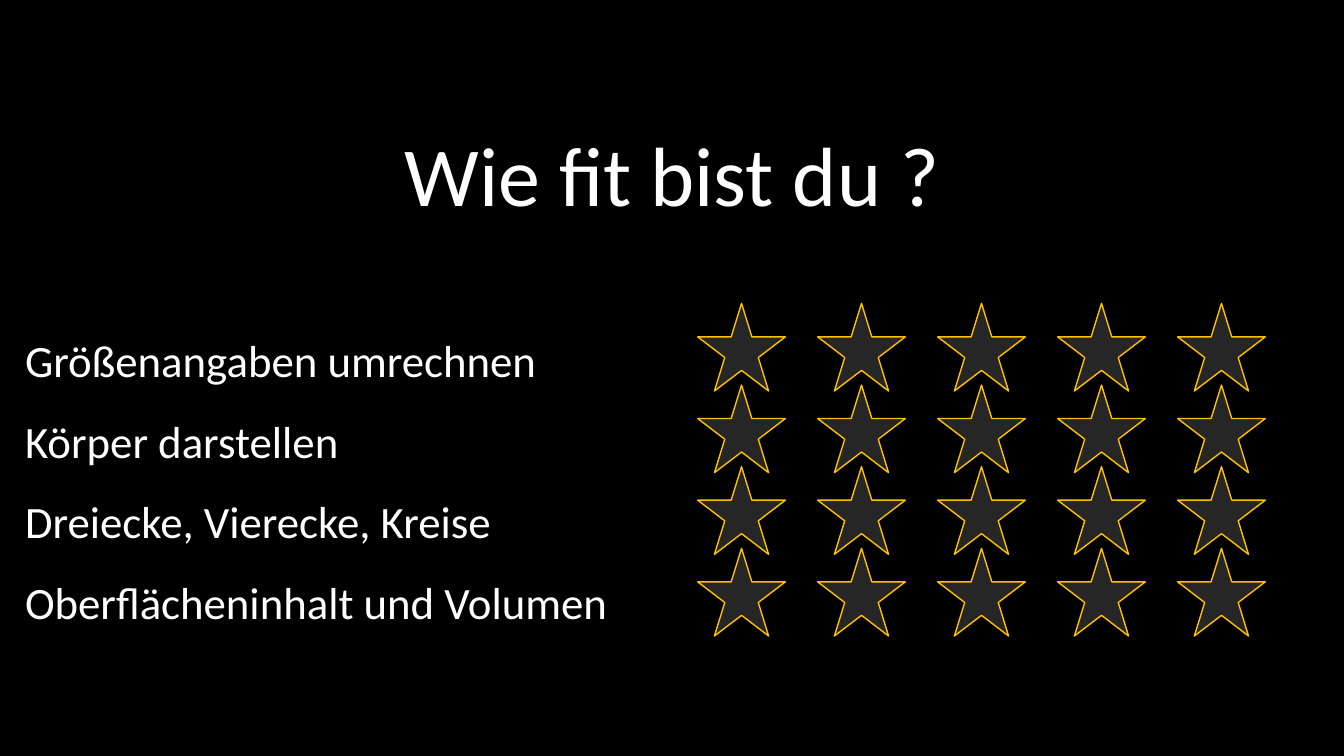
import pptx
import pptx.dml.color
import pptx.enum.shapes
import pptx.enum.text
import pptx.util

Inches = pptx.util.Inches
Pt = pptx.util.Pt
ALIGN = pptx.enum.text.PP_ALIGN

TITLE = "Wie fit bist du ?"
TOPICS = [
    "Größenangaben umrechnen",
    "Körper darstellen",
    "Dreiecke, Vierecke, Kreise",
    "Oberflächeninhalt und Volumen",
]
STARS_PER_TOPIC = 5
STAR_SIZE = 0.87
STARS_LEFT, STARS_TOP = 6.92, 3.01
STAR_STEP, RATING_STEP = 1.19, 0.81

TITLE_FORMAT = {"alignment": ALIGN.CENTER, "line_spacing": 0.9}
TOPIC_FORMAT = {"alignment": ALIGN.LEFT, "line_spacing": 1.5}
FIRST_TOPIC_FORMAT = {**TOPIC_FORMAT, "space_before": Pt(58)}


def rgb(value):
    return pptx.dml.color.RGBColor.from_string(value)


def paint(fill, value):
    fill.solid()
    fill.fore_color.rgb = rgb(value)


def apply(target, formats):
    for key, value in formats.items():
        setattr(target, key, value)


def write_line(paragraph, text, size, formats):
    apply(paragraph, formats)
    paragraph.text = text
    apply(paragraph.font, {"name": "Calibri", "size": Pt(size)})
    paragraph.font.color.rgb = rgb("FFFFFF")


def add_questions(slide):
    questions = slide.shapes.add_textbox(
        Inches(0.15), Inches(0.29), Inches(13.03), Inches(6.98)
    ).text_frame
    apply(questions, {
        "word_wrap": True,
        "vertical_anchor": pptx.enum.text.MSO_ANCHOR.MIDDLE,
    })
    write_line(questions.paragraphs[0], TITLE, 60, TITLE_FORMAT)
    for index, topic in enumerate(TOPICS):
        formats = TOPIC_FORMAT if index else FIRST_TOPIC_FORMAT
        write_line(questions.add_paragraph(), topic, 32, formats)


def add_star(rating, left, top):
    star = rating.shapes.add_shape(
        pptx.enum.shapes.MSO_SHAPE.STAR_5_POINT,
        Inches(left), Inches(top), Inches(STAR_SIZE), Inches(STAR_SIZE),
    )
    star.shadow.inherit = False
    paint(star.fill, "262626")
    paint(star.line.fill, "FFC000")
    star.line.width = Pt(1)


def add_rating(slide, top):
    rating = slide.shapes.add_group_shape()
    for column in range(STARS_PER_TOPIC):
        add_star(rating, STARS_LEFT + column * STAR_STEP, top)


def main():
    presentation = pptx.Presentation()
    apply(presentation, {
        "slide_width": Inches(13.33),
        "slide_height": Inches(7.5),
    })
    slide = presentation.slides.add_slide(presentation.slide_layouts[6])
    paint(slide.background.fill, "000000")
    add_questions(slide)
    for row in range(len(TOPICS)):
        add_rating(slide, STARS_TOP + row * RATING_STEP)
    presentation.save("out.pptx")


if __name__ == "__main__":
    main()
